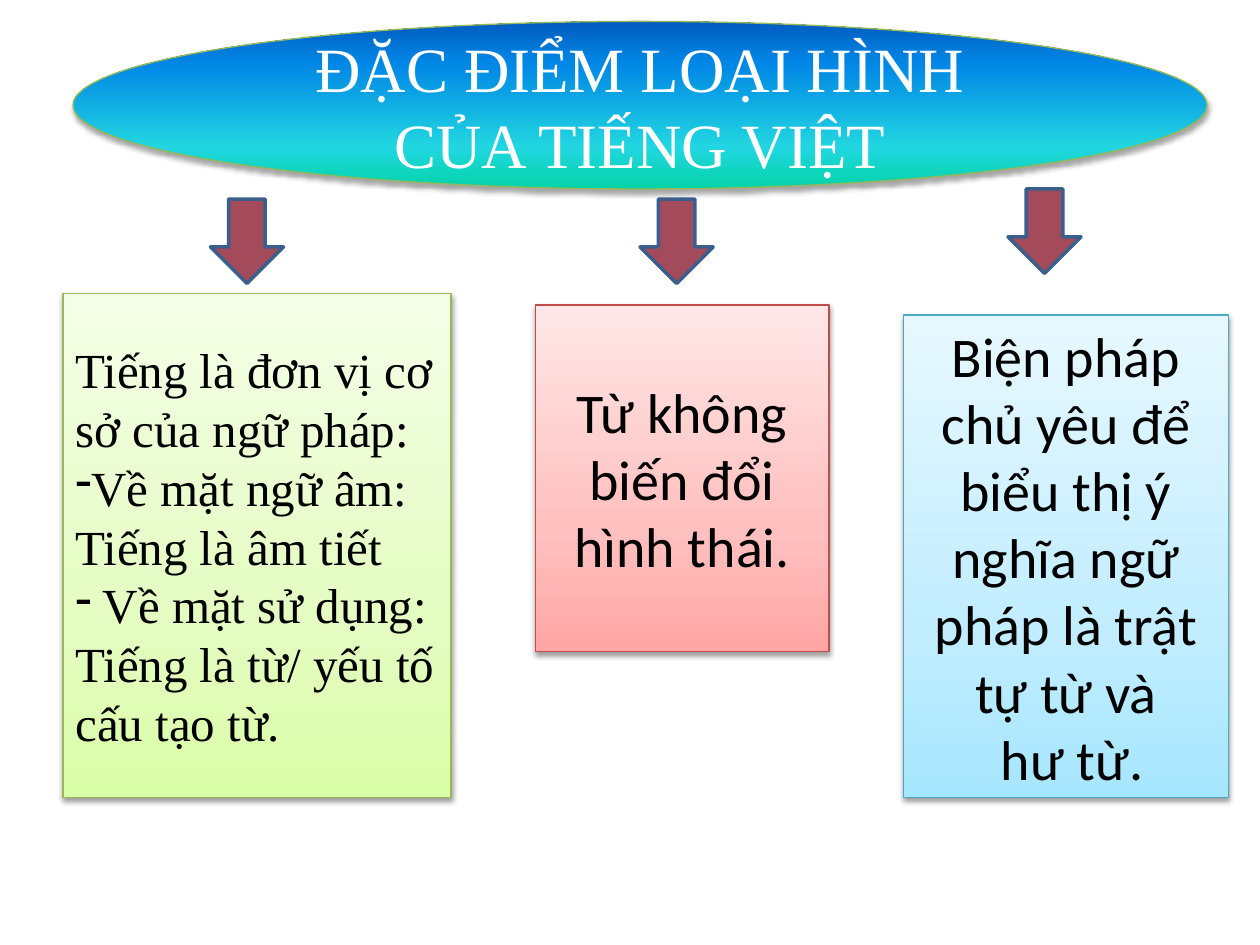
from lxml.etree import SubElement
from pptx import Presentation
from pptx.dml.color import RGBColor
from pptx.enum.shapes import MSO_SHAPE
from pptx.enum.text import MSO_ANCHOR, PP_ALIGN
from pptx.oxml.ns import qn
from pptx.util import Inches, Pt


def color(code):
    return RGBColor.from_string(code)


def add_node(parent, tag, **attrs):
    return SubElement(parent, qn(tag), {k: str(v) for k, v in attrs.items()})


def add_shape(slide, kind, box, line, width):
    shape = slide.shapes.add_shape(kind, *map(Inches, box))
    shape.line.color.rgb = color(line)
    shape.line.width = Pt(width)
    shape.shadow.inherit = False
    return shape


def fade(shape, stops):
    """Fill from bottom to top through (percent, colour) stops."""
    shape.fill.gradient()
    shape.fill.gradient_angle = 90
    stop_list = shape._element.spPr.find(".//" + qn("a:gsLst"))
    for old in list(stop_list):
        stop_list.remove(old)
    for percent, code in stops:
        stop = add_node(stop_list, "a:gs", pos=percent * 1000)
        add_node(stop, "a:srgbClr", val=code)


def add_shadow(shape, drop, alpha):
    effects = shape._element.spPr.find(qn("a:effectLst"))
    shadow = add_node(effects, "a:outerShdw", blurRad=Pt(3.1), dist=Pt(drop),
                      dir=5400000, rotWithShape=0)
    tint = add_node(shadow, "a:srgbClr", val="000000")
    add_node(tint, "a:alpha", val=alpha * 1000)


def write(shape, lines, font, size, ink, align):
    frame = shape.text_frame
    frame.word_wrap = True
    frame.vertical_anchor = MSO_ANCHOR.MIDDLE
    for i, line in enumerate(lines):
        para = frame.add_paragraph() if i else frame.paragraphs[0]
        para.text = line
        para.alignment = align
        para.font.name = font
        para.font.size = Pt(size)
        para.font.color.rgb = color(ink)


def add_dash(para):
    props = para._p.get_or_add_pPr()
    dash = props.makeelement(qn("a:buChar"), {"char": "-"})
    props.insert(0, dash)
    dash.addprevious(props.makeelement(qn("a:buFontTx"), {}))


def add_banner(slide, box):
    oval = add_shape(slide, MSO_SHAPE.OVAL, box, "98B955", 0.75)
    fade(oval, [(0, "03D4A8"), (25, "21D6E0"), (75, "0087E6"), (100, "005CBF")])
    add_shadow(oval, 1.8, 35)
    write(oval, ["ĐẶC ĐIỂM LOẠI HÌNH CỦA TIẾNG VIỆT"],
          "Times New Roman", 36, "FFFFFF", PP_ALIGN.CENTER)


def add_arrow(slide, left, top):
    arrow = add_shape(slide, MSO_SHAPE.DOWN_ARROW, (left, top, 0.58, 0.67),
                      "3A5F8C", 2)
    arrow.fill.solid()
    arrow.fill.fore_color.rgb = color("A34B5A")


def add_card(slide, box, line, shades, lines, font="Calibri", size=32,
             align=PP_ALIGN.CENTER):
    card = add_shape(slide, MSO_SHAPE.RECTANGLE, box, line, 0.75)
    fade(card, zip((0, 35, 100), shades))
    add_shadow(card, 1.6, 38)
    write(card, lines, font, size, "000000", align)
    return card


def main():
    deck = Presentation()
    deck.slide_width, deck.slide_height = Inches(10), Inches(7.5)
    slide = deck.slides.add_slide(deck.slide_layouts[6])

    # Heading and the arrows below it
    add_banner(slide, (0.58, 0.17, 9, 1.33))
    for left, top in ((1.67, 1.58), (5.08, 1.58), (8, 1.5)):
        add_arrow(slide, left, top)

    # Left: the syllable as base unit, with two dashed points
    unit = add_card(
        slide, (0.5, 2.33, 3.08, 4), "98B955", ("DAFDA7", "E4FCC2", "F5FFE7"),
        ["Tiếng là đơn vị cơ sở của ngữ pháp:",
         "Về mặt ngữ âm: Tiếng là âm tiết",
         " Về mặt sử dụng: Tiếng là từ/ yếu tố cấu tạo từ."],
        "Times New Roman", 28, PP_ALIGN.LEFT)
    for para in unit.text_frame.paragraphs[1:]:
        add_dash(para)

    # Middle: word form
    add_card(slide, (4.25, 2.42, 2.33, 2.75), "BF4C48",
             ("FFA6A5", "FFC0BF", "FFE7E7"), ["Từ không biến đổi hình thái."])

    # Right: word order and function words
    add_card(slide, (7.17, 2.5, 2.58, 3.83), "46AAC5",
             ("A7E6FF", "C1EDFF", "E7F8FF"),
             ["Biện pháp chủ yêu để biểu thị ý nghĩa ngữ pháp là trật tự từ và",
              " hư từ."])

    deck.save("out.pptx")


if __name__ == "__main__":
    main()
